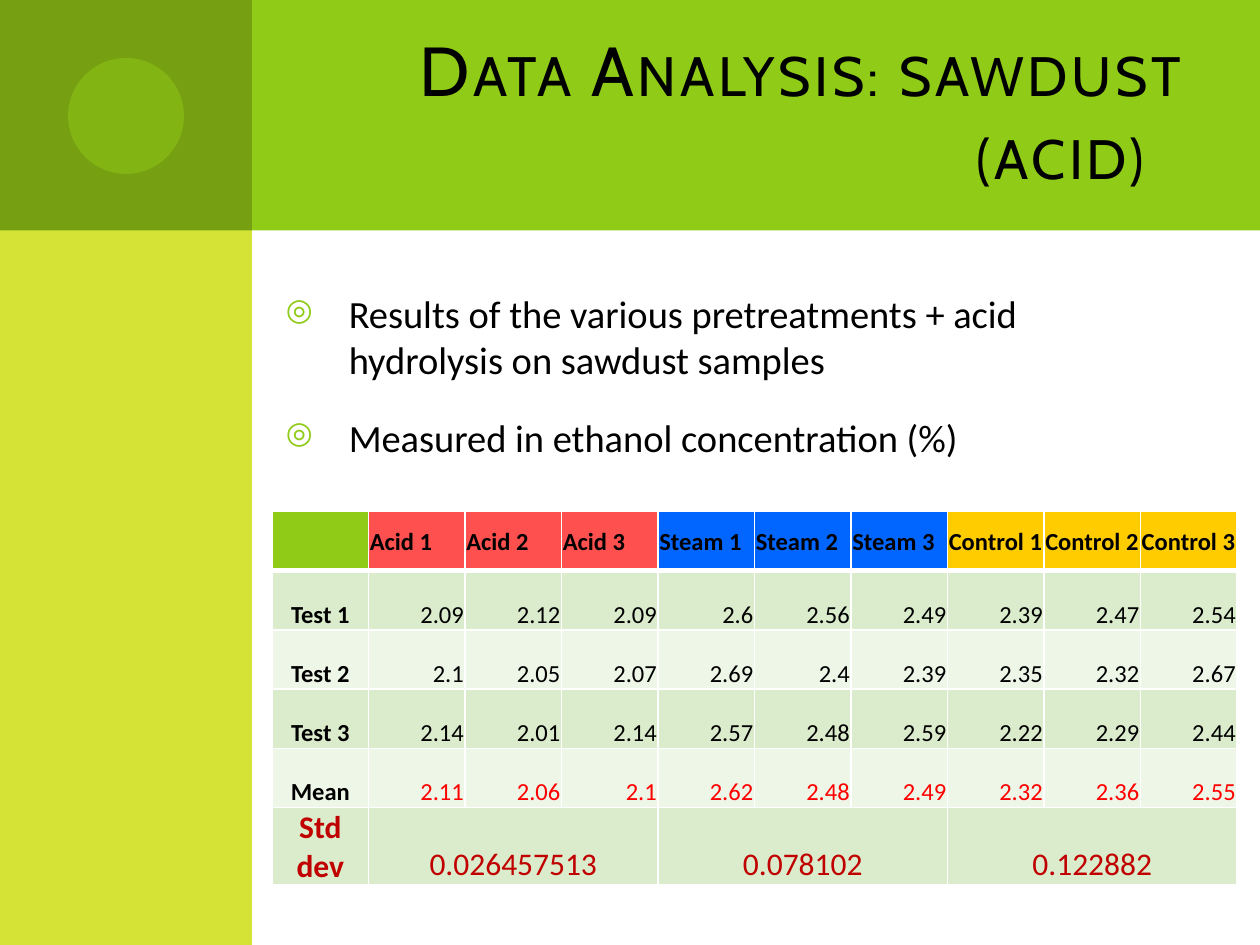
from typing import NamedTuple, Optional

from lxml.etree import SubElement as Sub
from pptx import Presentation
from pptx.dml.color import RGBColor
from pptx.enum.shapes import MSO_SHAPE as Shape
from pptx.enum.text import MSO_ANCHOR as Anchor, PP_ALIGN as Align
from pptx.oxml.ns import qn
from pptx.util import Inches, Pt

GREEN = RGBColor(0x8F, 0xCB, 0x17)
DARK = RGBColor(0x76, 0x9F, 0x11)
LIME = RGBColor(0xD4, 0xE3, 0x36)
CORAL = RGBColor(0xFF, 0x50, 0x50)
BLUE = RGBColor(0x00, 0x66, 0xFF)
GOLD = RGBColor(0xFF, 0xCC, 0x00)
BAND = RGBColor(0xDB, 0xEC, 0xCC)
PALE = RGBColor(0xEE, 0xF6, 0xE8)
RED = RGBColor(0xFF, 0x00, 0x00)
MAROON = RGBColor(0xC0, 0x00, 0x00)
BLACK = RGBColor(0x00, 0x00, 0x00)
WHITE = RGBColor(0xFF, 0xFF, 0xFF)


class Block(NamedTuple):
    kind: Shape
    left: float
    top: float
    width: float
    height: float
    color: RGBColor
    alpha: Optional[int] = None


class Group(NamedTuple):
    name: str
    color: RGBColor
    dev: str


class Style(NamedTuple):
    size: float = 14
    color: RGBColor = BLACK
    bold: bool = False
    align: Align = Align.RIGHT
    anchor: Anchor = Anchor.BOTTOM
    font: str = "Calibri"


BLOCKS = [
    Block(Shape.RECTANGLE, 0.5, 0, 9.5, 1.83, GREEN),
    Block(Shape.RECTANGLE, 0, 0, 2, 7.5, LIME),
    Block(Shape.RECTANGLE, 0, 0, 2, 1.83, DARK),
    Block(Shape.OVAL, 0.54, 0.46, 0.92, 0.92, GREEN, 50),
]
POINTS = [
    "Results of the various pretreatments + acid hydrolysis on sawdust samples",
    "Measured in ethanol concentration (%)",
]
GROUPS = [
    Group("Acid", CORAL, "0.026457513"),
    Group("Steam", BLUE, "0.078102"),
    Group("Control", GOLD, "0.122882"),
]
TESTS = {
    "Test 1": [2.09, 2.12, 2.09, 2.6, 2.56, 2.49, 2.39, 2.47, 2.54],
    "Test 2": [2.1, 2.05, 2.07, 2.69, 2.4, 2.39, 2.35, 2.32, 2.67],
    "Test 3": [2.14, 2.01, 2.14, 2.57, 2.48, 2.59, 2.22, 2.29, 2.44],
    "Mean": [2.11, 2.06, 2.1, 2.62, 2.48, 2.49, 2.32, 2.36, 2.55],
}
HEAD = Style(bold=True, align=Align.LEFT, anchor=Anchor.MIDDLE)
LABEL = Style(bold=True, align=Align.CENTER)
DEV = Style(18, MAROON, align=Align.CENTER)


def draw_block(slide, block: Block) -> None:
    box = [Inches(n) for n in block[1:5]]
    shape = slide.shapes.add_shape(block.kind, *box)
    shape.shadow.inherit = False
    shape.line.fill.background()
    shape.fill.solid()
    shape.fill.fore_color.rgb = block.color
    if block.alpha is not None:
        tint = shape.fill._xPr.find(f".//{qn('a:srgbClr')}")
        Sub(tint, qn("a:alpha"), val=str(block.alpha * 1000))


def add_box(slide, *box: float):
    frame = slide.shapes.add_textbox(*[Inches(n) for n in box]).text_frame
    frame.word_wrap = True
    return frame


def format_text(para, style: Style) -> None:
    para.alignment = style.align
    for run in para.runs:
        font = run.font
        font.name, font.size, font.bold = style.font, Pt(style.size), style.bold
        font.color.rgb = style.color


def add_bullet(para) -> None:
    props = para._p.get_or_add_pPr()
    props.set("marL", str(Inches(0.5)))
    props.set("indent", str(-Inches(0.5)))
    Sub(Sub(props, qn("a:buClr")), qn("a:srgbClr"), val=str(GREEN))
    Sub(props, qn("a:buSzPct"), val="80000")
    Sub(props, qn("a:buChar"), char="◎")


def set_cell(cell, text: str, style: Style, fill: RGBColor, base: float = 1) -> None:
    cell.margin_left = cell.margin_right = cell.margin_top = Inches(0.01)
    cell.margin_bottom = 0
    cell.vertical_anchor = style.anchor
    if text:
        cell.text_frame.text = text
        format_text(cell.text_frame.paragraphs[0], style)
    # Borders come before the fill in the cell properties
    props = cell._tc.get_or_add_tcPr()
    for side, width in zip("LRTB", (1, 1, 1, base)):
        line = Sub(props, qn(f"a:ln{side}"), w=str(Pt(width)))
        Sub(Sub(line, qn("a:solidFill")), qn("a:srgbClr"), val=str(WHITE))
    cell.fill.solid()
    cell.fill.fore_color.rgb = fill


def draw_table(slide) -> None:
    count = 3 * len(GROUPS) + 1
    last = len(TESTS) + 1
    box = [Inches(n) for n in (2.16, 4.06, 7.66, 2.89)]
    table = slide.shapes.add_table(last + 1, count, *box).table
    table.first_row = table.horz_banding = False
    for col in table.columns:
        col.width = Inches(7.66 / count)
    for row in table.rows:
        row.height = Inches(0.47)
    table.rows[last].height = Inches(0.54)

    # Header row
    set_cell(table.cell(0, 0), "", HEAD, GREEN, 3)
    for col in range(1, count):
        group = GROUPS[(col - 1) // 3]
        name = f"{group.name} {(col - 1) % 3 + 1}"
        set_cell(table.cell(0, col), name, HEAD, group.color, 3)

    # Test rows and their mean
    for row, (name, values) in enumerate(TESTS.items(), 1):
        fill = BAND if row % 2 else PALE
        style = Style(color=RED if name == "Mean" else BLACK)
        set_cell(table.cell(row, 0), name, LABEL, fill)
        for col, value in enumerate(values, 1):
            set_cell(table.cell(row, col), str(value), style, fill)

    # Deviation row, one merged cell per group
    set_cell(table.cell(last, 0), "Std dev", DEV._replace(bold=True), BAND)
    for col, group in zip(range(1, count, 3), GROUPS):
        cell = table.cell(last, col)
        cell.merge(table.cell(last, col + 2))
        set_cell(cell, group.dev, DEV, BAND)


def main() -> None:
    deck = Presentation()
    deck.slide_width, deck.slide_height = Inches(10), Inches(7.5)
    slide = deck.slides.add_slide(deck.slide_layouts[6])

    # Background
    for block in BLOCKS:
        draw_block(slide, block)

    # Title
    frame = add_box(slide, 2.67, 0.25, 6.83, 1.25)
    frame.vertical_anchor = Anchor.MIDDLE
    frame.text = "Data Analysis: sawdust (acid) "
    title = frame.paragraphs[0]
    format_text(title, Style(39.6, font="Cabin"))
    props = title.runs[0].font._element
    props.set("cap", "small")
    props.set("spc", "200")

    # Bullet points
    frame = add_box(slide, 2.17, 2.25, 6.83, 4.2)
    frame.text = "\n".join(POINTS)
    for para in frame.paragraphs:
        format_text(para, Style(22, align=Align.LEFT))
        para.space_before = Pt(18)
        add_bullet(para)

    draw_table(slide)
    deck.save("out.pptx")


if __name__ == "__main__":
    main()
